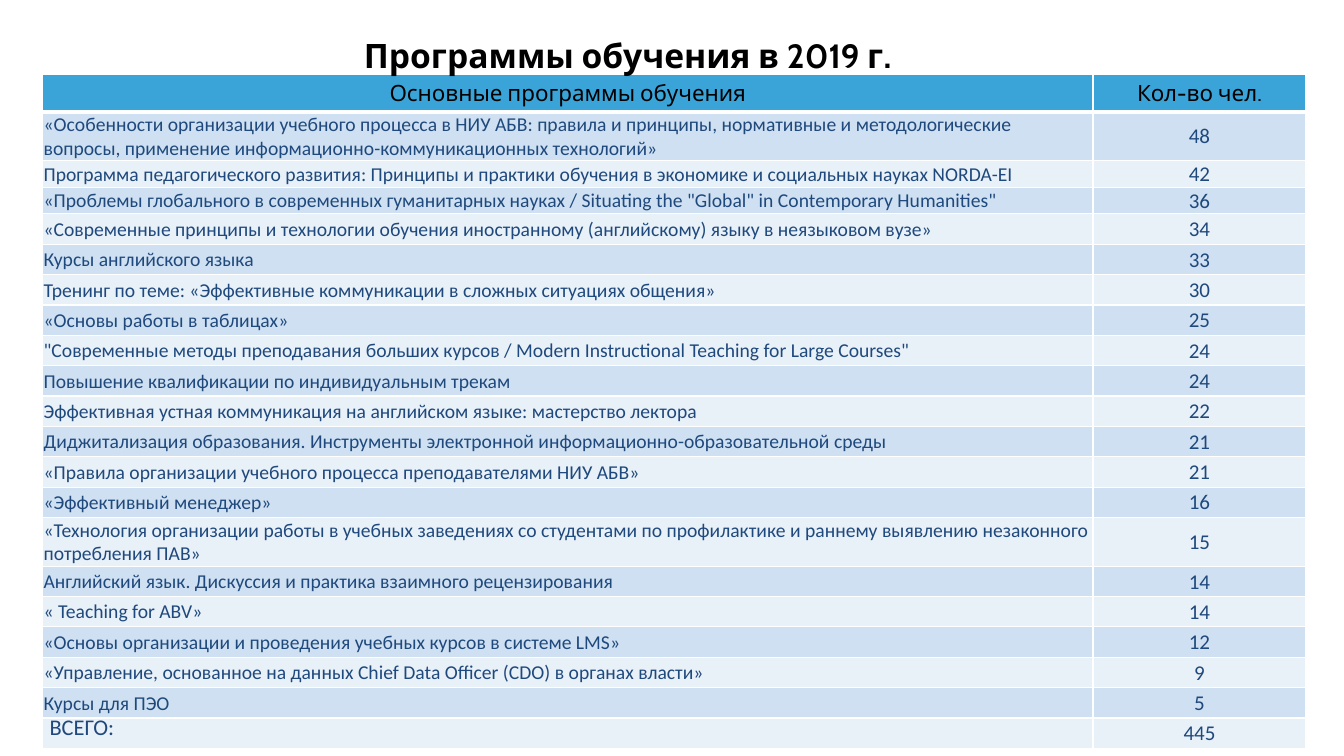
from pptx import Presentation
from pptx.dml.color import RGBColor
from pptx.enum.text import MSO_ANCHOR, PP_ALIGN
from pptx.oxml import parse_xml
from pptx.oxml.ns import nsdecls
from pptx.util import Pt

COLORS = {
    "black": "000000",
    "navy": "1F497D",
    "header": "3AA4D9",
    "band_dark": "CEE0F1",
    "band_light": "E8F0F8",
    "border": "FFFFFF",
}
HEADER = ("Основные программы обучения", "Кол-во чел.")
PROGRAMS = [
    ("«Особенности организации учебного процесса в НИУ АБВ: правила и принципы, нормативные и методологические "
     "вопросы, применение информационно-коммуникационных технологий»", 48),
    ("Программа педагогического развития: Принципы и практики обучения в экономике и социальных науках NORDA-EI", 42),
    ("«Проблемы глобального в современных гуманитарных науках / "
     "Situating the \"Global\" in Contemporary Humanities\"", 36),
    ("«Современные принципы и технологии обучения иностранному (английскому) языку в неязыковом вузе»", 34),
    ("Курсы английского языка", 33),
    ("Тренинг по теме: «Эффективные коммуникации в сложных ситуациях общения»", 30),
    ("«Основы работы в таблицах»", 25),
    ("\"Современные методы преподавания больших курсов / Modern Instructional Teaching for Large Courses\"", 24),
    ("Повышение квалификации по индивидуальным трекам", 24),
    ("Эффективная устная коммуникация на английском языке: мастерство лектора", 22),
    ("Диджитализация образования. Инструменты электронной информационно-образовательной среды", 21),
    ("«Правила организации учебного процесса преподавателями НИУ АБВ»", 21),
    ("«Эффективный менеджер»", 16),
    ("«Технология организации работы в учебных заведениях со студентами по профилактике "
     "и раннему выявлению незаконного потребления ПАВ»", 15),
    ("Английский язык. Дискуссия и практика взаимного рецензирования", 14),
    ("« Teaching for ABV»", 14),
    ("«Основы организации и проведения учебных курсов в системе LMS»", 12),
    ("«Управление, основанное на данных Chief Data Officer (CDO) в органах власти»", 9),
    ("Курсы для ПЭО", 5),
]
TOTAL = ("ВСЕГО:", 445)
COL_WIDTHS = (750.3, 152)
ROW_HEIGHT = 21.7
TIGHT_ROWS = {1: 17.3, 2: 17.3, 3: 19.1}


def write(tf, text, size, font, color, align=PP_ALIGN.LEFT, bold=False):
    p = tf.paragraphs[0]
    p.text = str(text)
    p.alignment = align
    p.font.size = Pt(size)
    p.font.name = font
    p.font.bold = bold
    p.font.color.rgb = RGBColor.from_string(COLORS[color])
    return p


def set_borders(cell, bottom=1):
    tc_pr = cell._tc.get_or_add_tcPr()
    for side, width in (("L", 1), ("R", 1), ("T", 1), ("B", bottom)):
        tc_pr.append(parse_xml(
            f'<a:ln{side} {nsdecls("a")} w="{Pt(width)}"><a:solidFill>'
            f'<a:srgbClr val="{COLORS["border"]}"/></a:solidFill></a:ln{side}>'))


def style_cell(cell, fill, bottom=1):
    set_borders(cell, bottom)
    cell.fill.solid()
    cell.fill.fore_color.rgb = RGBColor.from_string(COLORS[fill])


def set_margins(cell, side, top):
    cell.vertical_anchor = MSO_ANCHOR.MIDDLE
    cell.margin_left = cell.margin_right = Pt(side)
    cell.margin_top, cell.margin_bottom = Pt(top), Pt(0)


def add_programs_table(s):
    rows = PROGRAMS + [TOTAL]
    table = s.shapes.add_table(len(rows) + 1, 2, Pt(30.5), Pt(53.3),
                               Pt(sum(COL_WIDTHS)), Pt(ROW_HEIGHT * len(rows))).table
    for column, width in zip(table.columns, COL_WIDTHS):
        column.width = Pt(width)
    for i, row in enumerate(table.rows):
        row.height = Pt(TIGHT_ROWS.get(i, ROW_HEIGHT))

    # Header row
    for cell, text in zip(table.rows[0].cells, HEADER):
        style_cell(cell, "header", bottom=3)
        write(cell.text_frame, text, 16, "Cabin", "black", PP_ALIGN.CENTER)

    # Programs and total
    for i, (name, count) in enumerate(rows, start=1):
        is_total = i == len(rows)
        name_cell, count_cell = table.rows[i].cells
        for cell in (name_cell, count_cell):
            style_cell(cell, "band_dark" if i % 2 else "band_light")
            set_margins(cell, *((5, 0) if is_total else (0.7, 0.7)))
        p = write(name_cell.text_frame, name, 16 if is_total else 14, "Calibri", "navy")
        if is_total:
            p.line_spacing = Pt(12)
        write(count_cell.text_frame, count, 15, "Calibri", "navy", PP_ALIGN.CENTER)


def add_title(s, text):
    tf = s.shapes.add_textbox(Pt(165), Pt(21.6), Pt(566.6), Pt(45.4)).text_frame
    tf.word_wrap = True
    write(tf, text, 24, "Cabin", "black", PP_ALIGN.CENTER, bold=True)


def main():
    prs = Presentation()
    prs.slide_width, prs.slide_height = Pt(960), Pt(540)
    s = prs.slides.add_slide(prs.slide_layouts[6])
    add_programs_table(s)
    add_title(s, "Программы обучения в 2019 г.")
    prs.save("out.pptx")


if __name__ == "__main__":
    main()
